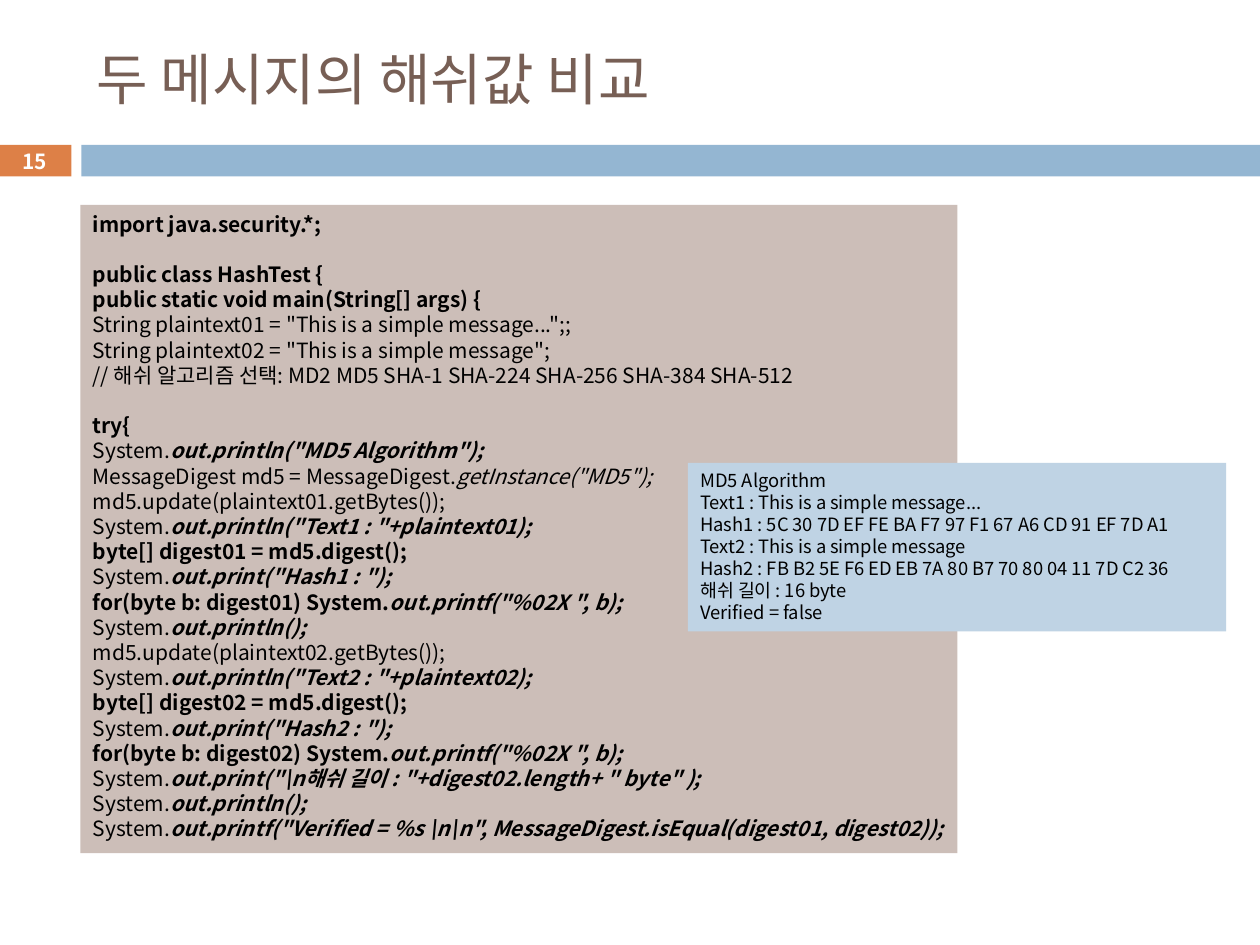
from dataclasses import dataclass

from lxml.etree import SubElement
from pptx import Presentation
from pptx.dml.color import RGBColor
from pptx.enum.shapes import MSO_SHAPE
from pptx.enum.text import MSO_ANCHOR, PP_ALIGN
from pptx.oxml.ns import qn
from pptx.util import Cm, Pt


@dataclass(frozen=True)
class Theme:
    font: str = "Noto Sans CJK KR"
    title: str = "775F55"
    text: str = "000000"
    number: str = "FFFFFF"
    accent: str = "DD8047"
    bar: str = "94B6D2"
    code_fill: str = "CCBEB8"
    output_fill: str = "BFD3E4"
    title_size: float = 32
    number_size: float = 11.9
    code_size: float = 12
    output_size: float = 10.5
    leading: float = 1.2


THEME = Theme()


def println(text):
    return [("System.", ""), (text, "bi")]


def digest_lines(n):
    """Code that hashes and prints message n."""
    return [
        [(f"md5.update(plaintext0{n}.getBytes());", "")],
        println(f'out.println("Text{n} : "+plaintext0{n});'),
        [(f"byte[] digest0{n} = md5.digest();", "b")],
        println(f'out.print("Hash{n} : ");'),
        [(f"for(byte b: digest0{n}) System.", "b"), ('out.printf("%02X ", b);', "bi")],
    ]


# Each block is a list of lines; each line is a list of (text, style) runs.
CODE = [
    [[("import java.security.*;", "b")]],
    [
        [("public class HashTest {", "b")],
        [("public static void main(String[] args) {", "b")],
        [('String plaintext01 = "This is a simple message...";;', "")],
        [('String plaintext02 = "This is a simple message";', "")],
        [("// 해쉬 알고리즘 선택: MD2 MD5 SHA-1 SHA-224 SHA-256 SHA-384 SHA-512", "")],
    ],
    [
        [("try{", "b")],
        println('out.println("MD5 Algorithm");'),
        [("MessageDigest md5 = MessageDigest.", ""), ('getInstance("MD5");', "i")],
        *digest_lines(1),
        println("out.println();"),
        *digest_lines(2),
        println('out.print("\\n해쉬 길이 : "+digest02.length+ " byte" );'),
        println("out.println();"),
        println('out.printf("Verified = %s \\n\\n", '
                "MessageDigest.isEqual(digest01, digest02));"),
    ],
]

OUTPUT = [[[(line, "")] for line in (
    "MD5 Algorithm",
    "Text1 : This is a simple message...",
    "Hash1 : 5C 30 7D EF FE BA F7 97 F1 67 A6 CD 91 EF 7D A1",
    "Text2 : This is a simple message",
    "Hash2 : FB B2 5E F6 ED EB 7A 80 B7 70 80 04 11 7D C2 36",
    "해쉬 길이 : 16 byte",
    "Verified = false",
)]]


def style_run(r, size, color, style=""):
    r.font.name = THEME.font
    r.font.size = Pt(size)
    r.font.bold = "b" in style
    r.font.italic = "i" in style
    r.font.color.rgb = RGBColor.from_string(color)
    SubElement(r.font._element, qn("a:ea"), typeface=THEME.font)


def add_rect(s, box, fill):
    sp = s.shapes.add_shape(MSO_SHAPE.RECTANGLE, *map(Cm, box))
    sp.shadow.inherit = False
    sp.fill.solid()
    sp.fill.fore_color.rgb = RGBColor.from_string(fill)
    sp.line.fill.background()
    return sp


def add_title(s, box, text):
    tf = s.shapes.add_textbox(*map(Cm, box)).text_frame
    tf.word_wrap = True
    tf.vertical_anchor = MSO_ANCHOR.MIDDLE
    tf.text = text
    style_run(tf.paragraphs[0].runs[0], THEME.title_size, THEME.title)


def add_number_band(s, box, number):
    """Slide number tab, a gap, then a bar filling the rest of the box."""
    left, top, width, height = box
    tab, gap = 1.47, 0.2
    tf = add_rect(s, (left, top, tab, height), THEME.accent).text_frame
    tf.margin_top = tf.margin_bottom = 0
    tf.vertical_anchor = MSO_ANCHOR.MIDDLE
    tf.text = number
    p = tf.paragraphs[0]
    p.alignment = PP_ALIGN.CENTER
    style_run(p.runs[0], THEME.number_size, THEME.number, "b")
    offset = tab + gap
    add_rect(s, (left + offset, top, width - offset, height), THEME.bar)


def add_listing(s, box, fill, blocks, size):
    """Filled panel of lines, with one line of space between blocks."""
    tf = add_rect(s, box, fill).text_frame
    tf.word_wrap = False
    tf.vertical_anchor = MSO_ANCHOR.TOP
    pitch = Pt(size * THEME.leading)
    p = None
    for block in blocks:
        for i, line in enumerate(block):
            starts_block = p is not None and i == 0
            p = tf.paragraphs[0] if p is None else tf.add_paragraph()
            p.alignment = PP_ALIGN.LEFT
            p.line_spacing = pitch
            if starts_block:
                p.space_before = pitch
            for text, style in line:
                r = p.add_run()
                r.text = text
                style_run(r, size, THEME.text, style)


def main():
    prs = Presentation()
    prs.slide_width, prs.slide_height = Cm(25.4), Cm(19.05)
    s = prs.slides.add_slide(prs.slide_layouts[6])
    add_number_band(s, (-0.03, 2.92, 25.43, 0.64), "15")
    add_title(s, (1.7, 0.64, 22.66, 1.88), "두 메시지의 해쉬값 비교")
    add_listing(s, (1.62, 4.13, 17.68, 13.07), THEME.code_fill, CODE, THEME.code_size)
    add_listing(s, (13.87, 9.33, 10.85, 3.4), THEME.output_fill, OUTPUT, THEME.output_size)
    prs.save("out.pptx")


if __name__ == "__main__":
    main()
